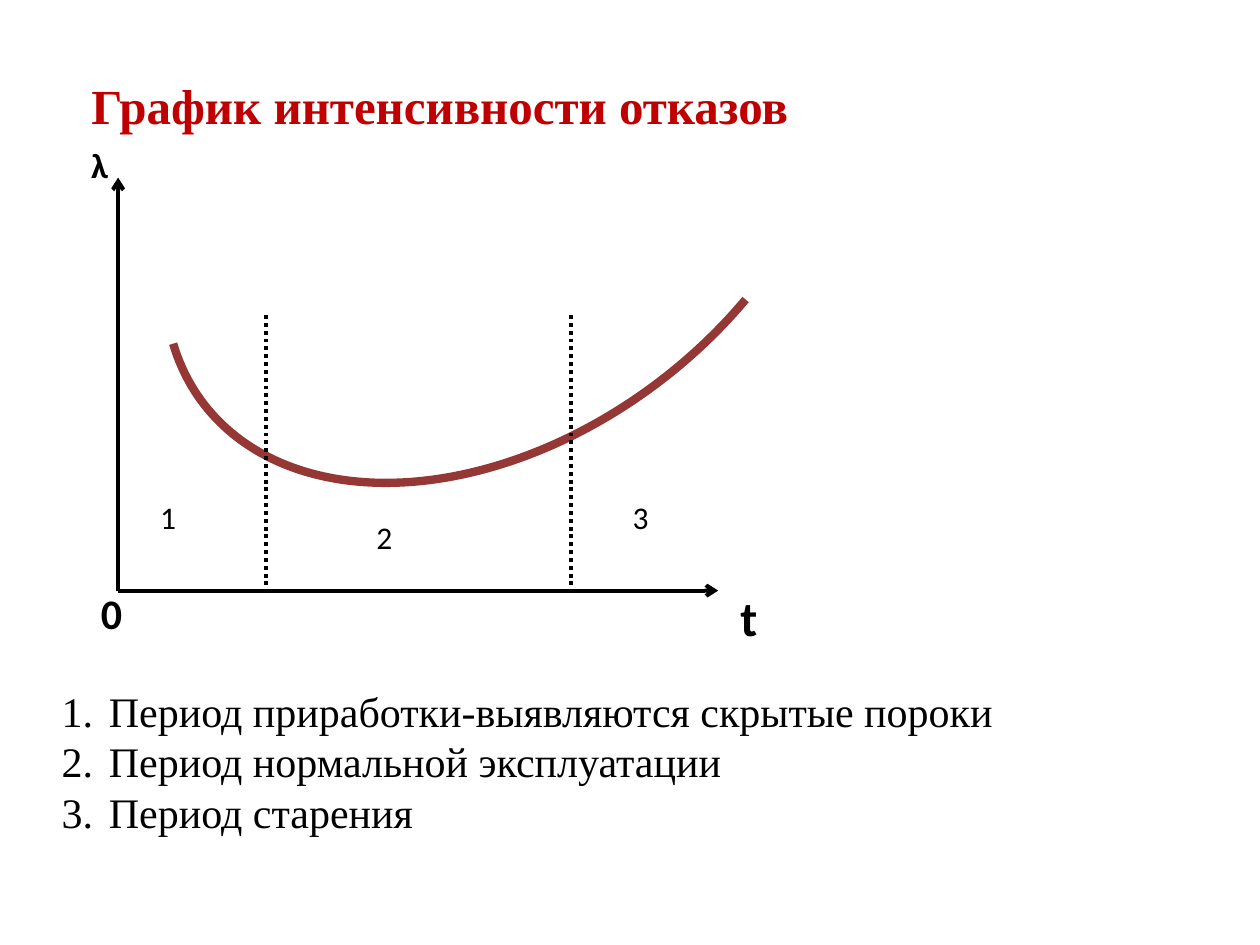
from dataclasses import dataclass

from lxml import etree
from pptx import Presentation
from pptx.dml.color import RGBColor
from pptx.enum.dml import MSO_LINE
from pptx.enum.shapes import MSO_CONNECTOR, MSO_SHAPE
from pptx.enum.text import MSO_ANCHOR, MSO_AUTO_SIZE, PP_ALIGN
from pptx.oxml.ns import qn
from pptx.util import Pt

LINE = MSO_CONNECTOR.STRAIGHT
ARC = MSO_SHAPE.ARC
DOT = MSO_LINE.ROUND_DOT
TOP = MSO_ANCHOR.TOP
LEFT = PP_ALIGN.LEFT
FIXED = MSO_AUTO_SIZE.NONE


@dataclass(frozen=True)
class Theme:
    ink: RGBColor = RGBColor(0, 0, 0)
    red: RGBColor = RGBColor(0xC0, 0, 0)
    curve: RGBColor = RGBColor(0x95, 0x37, 0x35)
    serif: str = "Times New Roman"
    sans: str = "Calibri"
    big: int = 28
    text: int = 24
    mid: int = 20
    small: int = 18
    thin: float = 2.25
    thick: float = 4.75


THEME = Theme()


def place(shape, left, top, width, height):
    shape.left, shape.top = Pt(left), Pt(top)
    shape.width, shape.height = Pt(width), Pt(height)


def frame(shape):
    text = shape.text_frame
    text.word_wrap = True
    text.auto_size = FIXED
    text.vertical_anchor = TOP
    return text


def add_run(para, words, size, face, color, bold=False):
    para.alignment = LEFT
    run = para.add_run()
    run.text = words
    font = run.font
    font.size, font.name, font.bold = Pt(size), face, bold
    font.color.rgb = color


def add_title(slide, words):
    title = slide.shapes.title
    place(title, 45, 39.6, 450, 41)
    para = frame(title).paragraphs[0]
    add_run(para, words, THEME.big, THEME.serif, THEME.red, True)


def add_list(slide, items):
    body = slide.placeholders[1]
    place(body, 28, 388, 568, 94)
    text = frame(body)
    for i, words in enumerate(items):
        para = text.add_paragraph() if i else text.paragraphs[0]
        para.space_before = Pt(0)
        para.line_spacing = Pt(28.8)
        add_run(para, words, THEME.text, THEME.serif, THEME.ink)
        props = para._p.get_or_add_pPr()
        props.set("marL", str(Pt(27)))
        props.set("indent", str(Pt(-27)))
        font = etree.SubElement(props, qn("a:buFont"))
        font.set("typeface", THEME.serif)
        mark = etree.SubElement(props, qn("a:buAutoNum"))
        mark.set("type", "arabicPeriod")


def add_label(slide, words, left, top, width, size, bold=False):
    box = slide.shapes.add_textbox(Pt(left), Pt(top), Pt(width), Pt(size * 1.2 + 7.2))
    para = frame(box).paragraphs[0]
    add_run(para, words, size, THEME.sans, THEME.ink, bold)


def add_line(slide, start, end, arrow=False):
    ends = [Pt(n) for n in (*start, *end)]
    link = slide.shapes.add_connector(LINE, *ends)
    link.line.color.rgb = THEME.ink
    link.line.width = Pt(THEME.thin)
    if arrow:
        head = etree.SubElement(link.line._get_or_add_ln(), qn("a:tailEnd"))
        head.set("type", "arrow")
    else:
        link.line.dash_style = DOT
    etree.SubElement(link._element.spPr, qn("a:effectLst"))


def add_curve(slide):
    arc = slide.shapes.add_shape(ARC, Pt(71.3), Pt(-50.4), Pt(432.7), Pt(298))
    arc.adjustments[0] = 147.285
    arc.adjustments[1] = 6.244
    arc.rotation = 142.2
    arc.shadow.inherit = False
    arc.fill.background()
    arc.line.color.rgb = THEME.curve
    arc.line.width = Pt(THEME.thick)


def main():
    deck = Presentation()
    deck.slide_width, deck.slide_height = Pt(720), Pt(540)
    slide = deck.slides.add_slide(deck.slide_layouts[1])

    add_title(slide, "График интенсивности отказов")
    left, base = 67.5, 337.5
    add_line(slide, (left, base), (410.4, base), True)
    add_line(slide, (left, base + 0.5), (left, 101.5), True)
    add_label(slide, "t", 416, 332, 45, THEME.big, True)
    add_label(slide, "λ", 45, 78.5, 40, THEME.mid, True)
    add_label(slide, "0", 50.5, 332, 28, THEME.text, True)

    add_curve(slide)
    for x in (151.9, 326.2):
        add_line(slide, (x, 180), (x, base))
    zones = ((84.4, 281.3), (208, 292.5), (354.4, 281.3))
    for i, (x, y) in enumerate(zones, 1):
        add_label(slide, str(i), x, y, 45, THEME.small)

    add_list(slide, (
        "Период приработки-выявляются скрытые пороки",
        "Период нормальной эксплуатации",
        "Период старения",
    ))
    deck.save("out.pptx")


if __name__ == "__main__":
    main()
